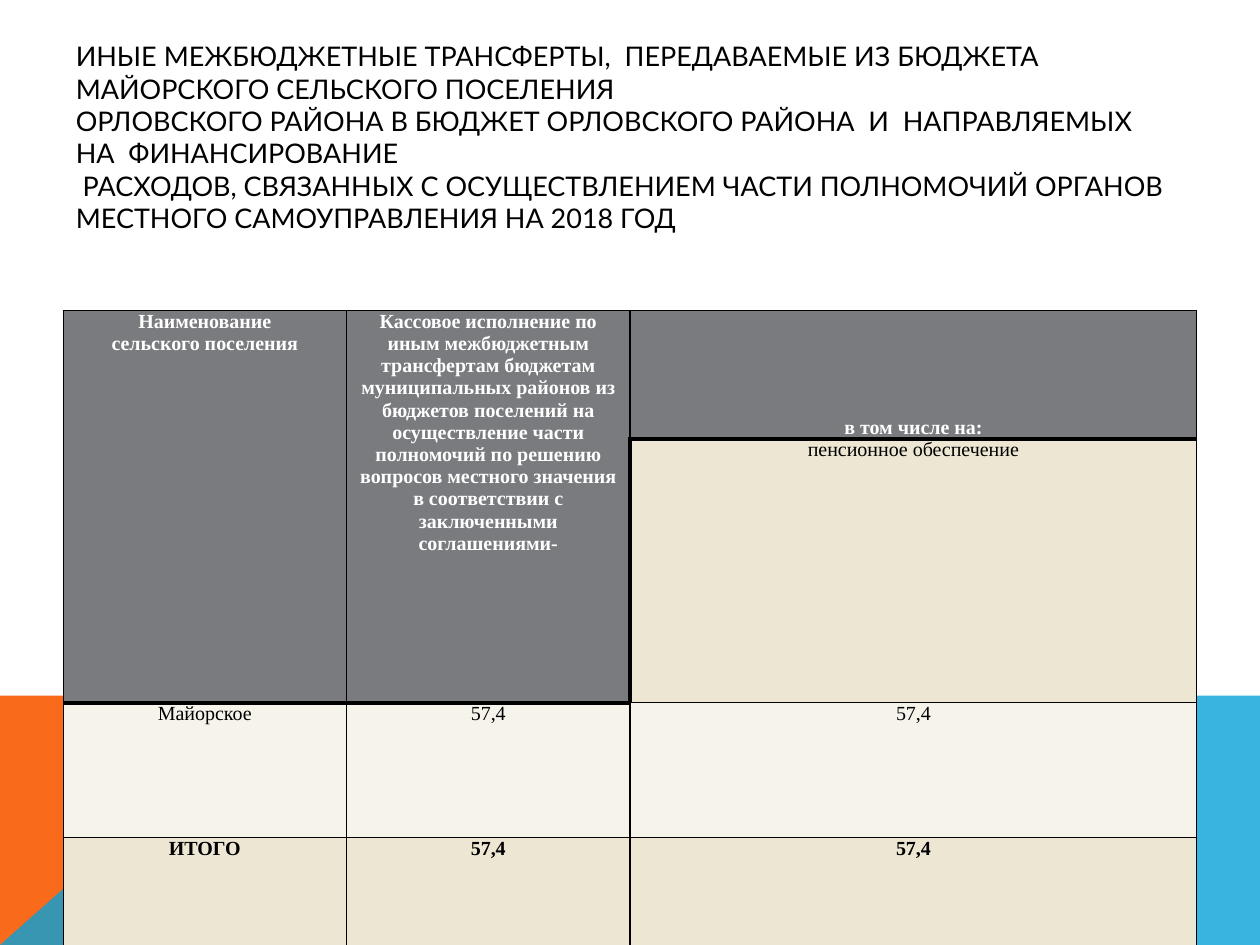
from lxml import etree
from pptx import Presentation
from pptx.dml.color import RGBColor
from pptx.enum.text import MSO_ANCHOR, PP_ALIGN
from pptx.oxml.ns import qn
from pptx.util import Cm, Pt

TOP, MIDDLE, BOTTOM = MSO_ANCHOR.TOP, MSO_ANCHOR.MIDDLE, MSO_ANCHOR.BOTTOM
LEFT, CENTER = PP_ALIGN.LEFT, PP_ALIGN.CENTER

PAGE_WIDTH, PAGE_HEIGHT = 35.56, 26.67
BLACK, WHITE = "000000", "FFFFFF"
ORANGE, BLUE = "F96A1B", "08A1D9"
HEADER_GREY, SAND, LIGHT_SAND = "797B7E", "EDE6D3", "F6F3EA"
THIN, THICK = 1, 3

TITLE = (
    "ИНЫЕ МЕЖБЮДЖЕТНЫЕ ТРАНСФЕРТЫ,  ПЕРЕДАВАЕМЫЕ ИЗ БЮДЖЕТА "
    "МАЙОРСКОГО СЕЛЬСКОГО ПОСЕЛЕНИЯ\v"
    "ОРЛОВСКОГО РАЙОНА В БЮДЖЕТ ОРЛОВСКОГО РАЙОНА  И  НАПРАВЛЯЕМЫХ  "
    "НА  ФИНАНСИРОВАНИЕ\v"
    " РАСХОДОВ, СВЯЗАННЫХ С ОСУЩЕСТВЛЕНИЕМ ЧАСТИ ПОЛНОМОЧИЙ ОРГАНОВ "
    "МЕСТНОГО САМОУПРАВЛЕНИЯ НА 2018 ГОД"
)
COLUMN_WIDTHS = [8, 8, 16]
ROW_HEIGHTS = [3.63, 3.81, 3.81, 3.81]
ROWS = [
    [
        "Наименование\nсельского поселения",
        "Кассовое исполнение по иным межбюджетным трансфертам бюджетам "
        "муниципальных районов из бюджетов поселений на осуществление части "
        "полномочий по решению вопросов местного значения в соответствии с "
        "заключенными соглашениями-",
        "в том числе на:",
    ],
    ["", "", "пенсионное обеспечение"],
    ["Майорское", "57,4", "57,4"],
    ["ИТОГО", "57,4", "57,4"],
]
ROW_FILLS = [HEADER_GREY, SAND, LIGHT_SAND, SAND]
THICK_SIDES = {
    (0, 0): "B", (0, 1): "B", (0, 2): "B",
    (1, 0): "B", (1, 1): "RB", (1, 2): "LT",
    (2, 0): "T", (2, 1): "T",
}


def color(value):
    return RGBColor.from_string(value)


def write_text(frame, text, *, font, size, ink, bold=False, align=LEFT):
    """Fill the frame with one paragraph per line of text."""
    frame.word_wrap = True
    frame.text = text
    for para in frame.paragraphs:
        para.alignment = align
        for span in para.runs:
            span.font.name = font
            span.font.size = Pt(size)
            span.font.bold = bold
            span.font.color.rgb = color(ink)


def add_polygon(page, points, fill, opacity=100):
    corners = [(Cm(x), Cm(y)) for x, y in points]
    builder = page.shapes.build_freeform(*corners[0])
    builder.add_line_segments(corners[1:], close=True)
    shape = builder.convert_to_shape()
    shape.shadow.inherit = False
    shape.fill.solid()
    shape.fill.fore_color.rgb = color(fill)
    shape.line.fill.background()
    if opacity < 100:
        tint = shape.fill._xPr.find(".//" + qn("a:srgbClr"))
        etree.SubElement(tint, qn("a:alpha"), val=str(opacity * 1000))


def add_footer_bands(page, left, top, width, height):
    right, bottom = left + width, top + height
    slope_top, slope_bottom = left + 7.94, left + 13.89
    add_polygon(page, [(left, bottom), (left, top), (slope_top, top),
                       (slope_bottom, bottom)], ORANGE)
    add_polygon(page, [(left, bottom), (slope_top, top), (right, top),
                       (right, bottom)], BLUE, opacity=80)


def add_title(page, left, top, width, height):
    box = page.shapes.add_textbox(Cm(left), Cm(top), Cm(width), Cm(height))
    frame = box.text_frame
    frame.vertical_anchor = MIDDLE
    frame.margin_left = frame.margin_right = Cm(0.36)
    frame.margin_top, frame.margin_bottom = Cm(0.18), Cm(1.09)
    write_text(frame, TITLE, font="Lato", size=21.6, ink=BLACK)


def set_borders(cell, thick_sides):
    properties = cell._tc.get_or_add_tcPr()
    for side in "LRTB":
        weight = THICK if side in thick_sides else THIN
        line = etree.SubElement(properties, qn(f"a:ln{side}"), w=str(Pt(weight)))
        fill = etree.SubElement(line, qn("a:solidFill"))
        etree.SubElement(fill, qn("a:srgbClr"), val=BLACK)


def add_transfer_table(page, left, top):
    table = page.shapes.add_table(
        len(ROW_HEIGHTS), len(COLUMN_WIDTHS), Cm(left), Cm(top),
        Cm(sum(COLUMN_WIDTHS)), Cm(sum(ROW_HEIGHTS))).table
    for column, width in zip(table.columns, COLUMN_WIDTHS):
        column.width = Cm(width)
    for row, height in zip(table.rows, ROW_HEIGHTS):
        row.height = Cm(height)
    for column in (0, 1):
        table.cell(0, column).merge(table.cell(1, column))

    total_row = len(ROWS) - 1
    for r, texts in enumerate(ROWS):
        for c, text in enumerate(texts):
            cell = table.cell(r, c)
            set_borders(cell, THICK_SIDES.get((r, c), ""))
            cell.fill.solid()
            cell.fill.fore_color.rgb = color(HEADER_GREY if cell.is_spanned else ROW_FILLS[r])
            cell.margin_left = cell.margin_right = Cm(0.18)
            cell.margin_top = cell.margin_bottom = 0
            cell.vertical_anchor = BOTTOM if (r, c) == (0, 2) else TOP
            if text:
                write_text(cell.text_frame, text, font="Times New Roman", size=16,
                           ink=WHITE if r == 0 else BLACK,
                           bold=r in (0, total_row), align=CENTER)


def main():
    deck = Presentation()
    deck.slide_width, deck.slide_height = Cm(PAGE_WIDTH), Cm(PAGE_HEIGHT)
    page = deck.slides.add_slide(deck.slide_layouts[6])
    add_footer_bands(page, 0, 19.63, PAGE_WIDTH, PAGE_HEIGHT - 19.63)
    add_title(page, 1.78, 1.07, 32, 6.5)
    add_transfer_table(page, 1.78, 8.76)
    deck.save("out.pptx")


if __name__ == "__main__":
    main()
